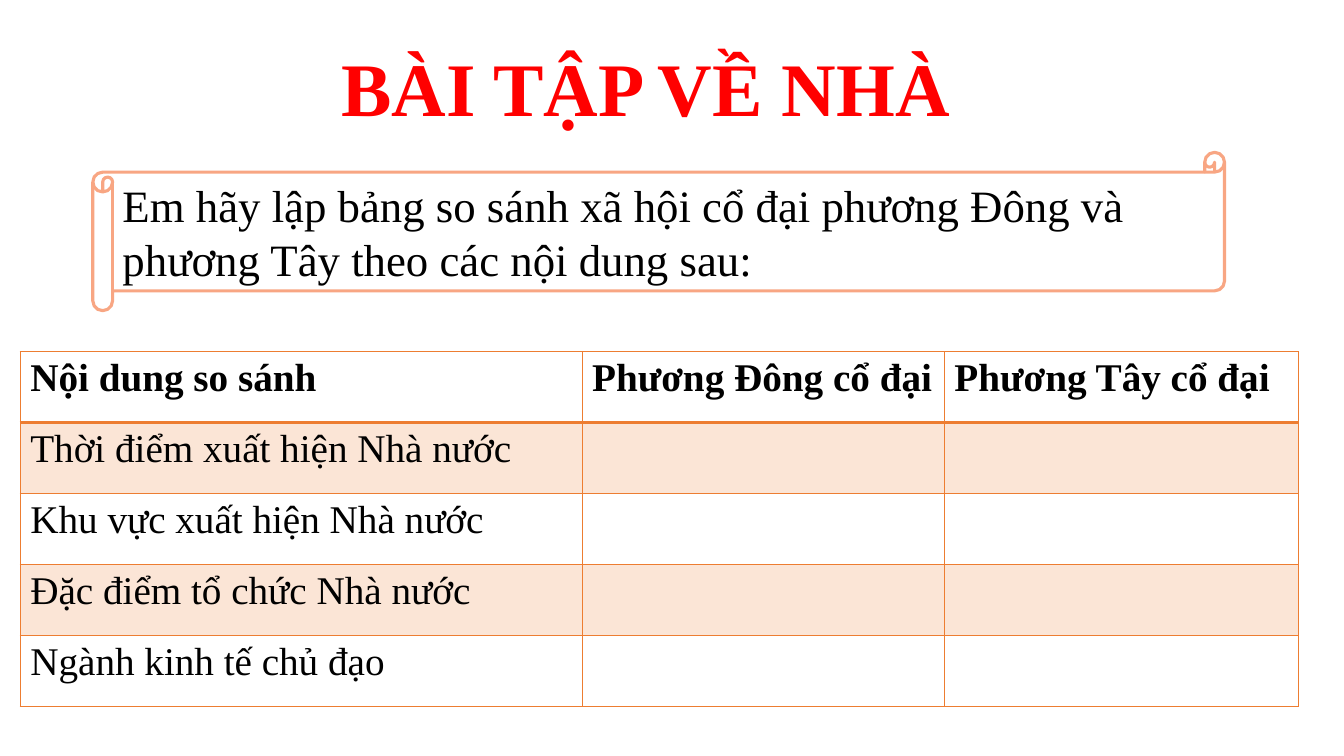
from lxml import etree
from pptx import Presentation
from pptx.dml.color import RGBColor
from pptx.enum.shapes import MSO_SHAPE
from pptx.enum.text import MSO_ANCHOR, PP_ALIGN
from pptx.oxml.ns import qn
from pptx.util import Cm, Pt

SCROLL = MSO_SHAPE.HORIZONTAL_SCROLL
TOP, MIDDLE = MSO_ANCHOR.TOP, MSO_ANCHOR.MIDDLE
LEFT = PP_ALIGN.LEFT

RED = RGBColor(0xFF, 0x00, 0x00)
BLACK = RGBColor(0x00, 0x00, 0x00)
ORANGE = RGBColor(0xED, 0x7D, 0x31)
PEACH = RGBColor(0xF8, 0xA6, 0x83)
PALE_ORANGE = RGBColor(0xFB, 0xE5, 0xD6)
FONT = "Times New Roman"

COLUMN_WIDTHS = (14.16, 9.13, 8.92)
ROW_HEIGHT = 1.79
COMPARISON = (
    ("Nội dung so sánh", "Phương Đông cổ đại", "Phương Tây cổ đại"),
    ("Thời điểm xuất hiện Nhà nước", "", ""),
    ("Khu vực xuất hiện Nhà nước", "", ""),
    ("Đặc điểm tổ chức Nhà nước", "", ""),
    ("Ngành kinh tế chủ đạo", "", ""),
)


def write(frame, text, size, color=BLACK, bold=False, anchor=MIDDLE, spacing=1.0):
    frame.word_wrap = True
    frame.vertical_anchor = anchor
    paragraph = frame.paragraphs[0]
    paragraph.alignment = LEFT
    paragraph.line_spacing = spacing
    run = paragraph.add_run()
    run.text = text
    run.font.name = FONT
    run.font.size = Pt(size)
    run.font.bold = bold
    run.font.color.rgb = color


def add_title(slide, text):
    title = slide.shapes.add_textbox(Cm(8.36), Cm(1.09), Cm(17.42), Cm(2.46))
    write(title.text_frame, text, 54, RED, bold=True, spacing=0.9)


def add_task_scroll(slide, text):
    scroll = slide.shapes.add_shape(SCROLL, Cm(2.34), Cm(3.84), Cm(28.52), Cm(3.99))
    scroll.shadow.inherit = False
    scroll.fill.background()
    scroll.line.color.rgb = PEACH
    scroll.line.width = Pt(2.25)
    write(scroll.text_frame, text, 32)


def set_borders(cell, **widths):
    """Draw orange cell borders; widths are points keyed by side, in L, R, T, B order."""
    properties = cell._tc.get_or_add_tcPr()
    for side, width in widths.items():
        line = etree.SubElement(properties, qn(f"a:ln{side}"), w=str(Pt(width)))
        fill = etree.SubElement(line, qn("a:solidFill"))
        etree.SubElement(fill, qn("a:srgbClr"), val=str(ORANGE))


def add_comparison_table(slide):
    table = slide.shapes.add_table(
        len(COMPARISON), len(COLUMN_WIDTHS), Cm(0.51), Cm(8.86),
        Cm(sum(COLUMN_WIDTHS)), Cm(ROW_HEIGHT * len(COMPARISON))).table
    table.first_row = False
    table.horz_banding = False
    for column, width in zip(table.columns, COLUMN_WIDTHS):
        column.width = Cm(width)
    for index, (row, labels) in enumerate(zip(table.rows, COMPARISON)):
        row.height = Cm(ROW_HEIGHT)
        for cell, label in zip(row.cells, labels):
            set_borders(cell, L=1, R=1, T=2 if index == 1 else 1, B=2 if index == 0 else 1)
            if index % 2:
                cell.fill.solid()
                cell.fill.fore_color.rgb = PALE_ORANGE
            else:
                cell.fill.background()
            if label:
                write(cell.text_frame, label, 28, bold=index == 0, anchor=TOP)


def main():
    presentation = Presentation()
    presentation.slide_width = Cm(33.87)
    presentation.slide_height = Cm(19.05)
    slide = presentation.slides.add_slide(presentation.slide_layouts[6])
    add_title(slide, "BÀI TẬP VỀ NHÀ")
    add_task_scroll(slide, "Em hãy lập bảng so sánh xã hội cổ đại phương Đông và "
                           "phương Tây theo các nội dung sau:")
    add_comparison_table(slide)
    presentation.save("out.pptx")


if __name__ == "__main__":
    main()
